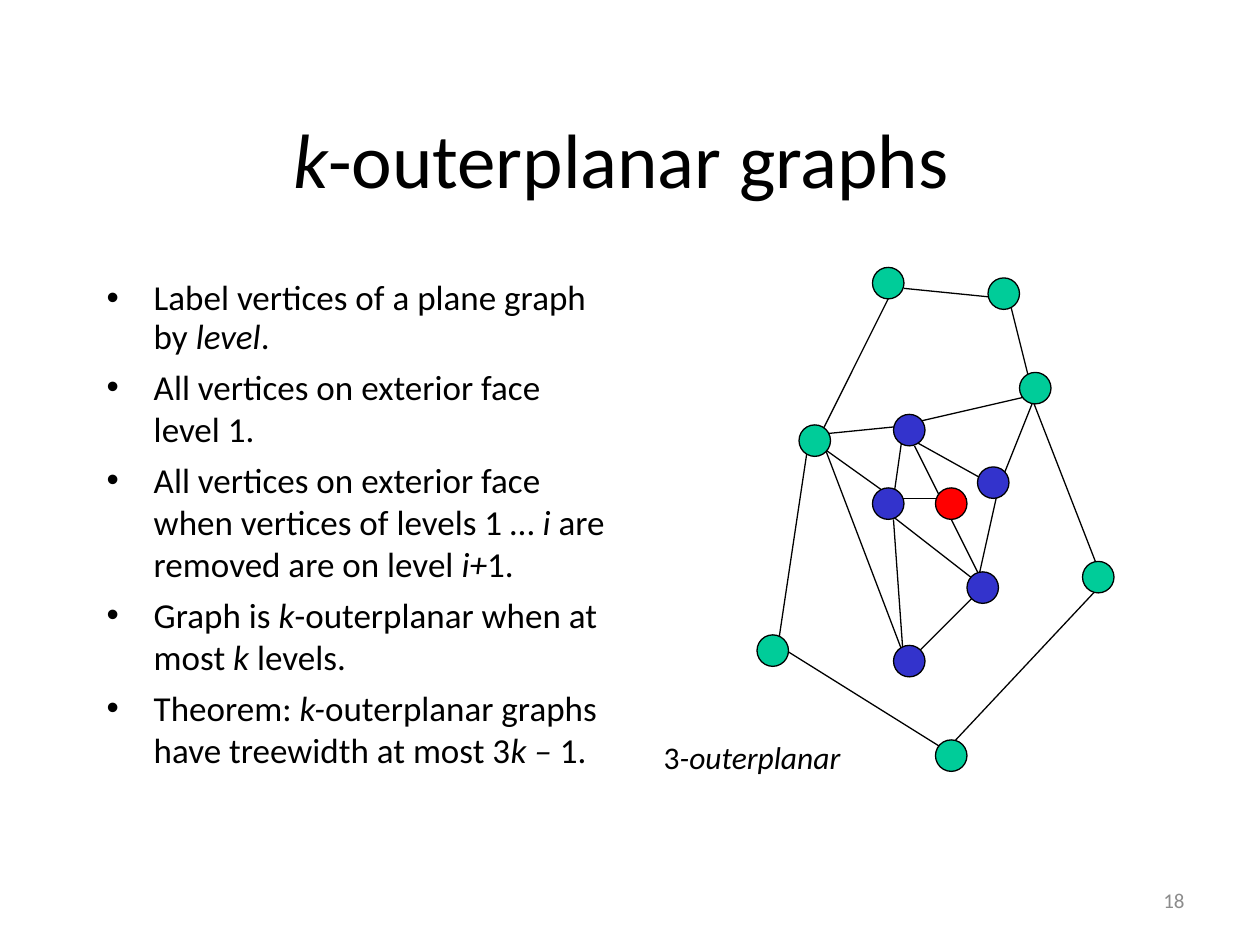
"""Build a slide that explains k-outerplanar graphs beside a drawn example."""
from lxml.etree import SubElement
from pptx import Presentation
from pptx.dml.color import RGBColor
from pptx.enum.shapes import MSO_CONNECTOR, MSO_SHAPE
from pptx.enum.text import MSO_ANCHOR, PP_ALIGN
from pptx.oxml.ns import qn
from pptx.util import Cm, Pt

BLACK = RGBColor(0x00, 0x00, 0x00)
GRAY = RGBColor(0x8C, 0x8C, 0x8C)
GREEN = RGBColor(0x00, 0xCC, 0x99)
BLUE = RGBColor(0x33, 0x33, 0xCC)
RED = RGBColor(0xFF, 0x00, 0x00)

TITLE = ["*k*-outerplanar graphs "]
POINTS = [
    "Label vertices of a plane graph by *level*.",
    "All vertices on exterior face level 1.",
    "All vertices on exterior face when vertices of levels 1 … *i* are removed are on level *i+*1.",
    "Graph is *k*-outerplanar when at most *k* levels.",
    "Theorem: *k-*outerplanar graphs have treewidth at most 3*k – *1.",
]
LABEL = ["3*-outerplanar*"]
PAGE = ["18"]

LEFT, TOP, UNIT, SIZE = 15.26, 5.39, 2.54 / 12, 3
LEVELS = [
    (GREEN, [(11, 0), (22, 1), (25, 10), (31, 28), (4, 15), (0, 35), (17, 45)]),
    (BLUE, [(21, 19), (20, 29), (11, 21), (13, 14), (13, 36)]),
    (RED, [(17, 21)]),
]
EDGES = [
    (18, 23, 22, 31), (13, 24, 14, 38), (20, 22, 13, 22), (13, 22, 6, 17),
    (15, 17, 18, 23), (14, 16, 23, 21), (12, 23, 21, 30), (14, 15, 13, 22),
    (22, 30, 15, 37), (23, 21, 21, 30), (14, 15, 27, 12), (5, 16, 15, 15),
    (13, 2, 6, 16), (5, 16, 2, 36), (18, 46, 2, 36), (18, 46, 33, 30),
    (26, 12, 33, 30), (6, 16, 14, 37), (27, 11, 23, 21), (24, 3, 26, 11),
    (14, 2, 24, 3),
]


def apply(item, **vals):
    for name, val in vals.items():
        setattr(item, name, val)


def spot(x, y):
    return Cm(LEFT + x * UNIT), Cm(TOP + y * UNIT)


def write(slide, box, lines, size, color=BLACK, anchor=MSO_ANCHOR.TOP, **form):
    frame = slide.shapes.add_textbox(*map(Cm, box)).text_frame
    apply(frame, word_wrap=True, vertical_anchor=anchor)
    for num, line in enumerate(lines):
        para = frame.add_paragraph() if num else frame.paragraphs[0]
        apply(para, **form)
        for part, words in enumerate(line.split("*")):
            if words:
                run = para.add_run()
                run.text = words
                apply(run.font, name="Calibri", size=Pt(size), italic=part % 2 == 1)
                run.font.color.rgb = color
    return frame


def bullet(para):
    props = para._p.get_or_add_pPr()
    props.set("marL", str(Cm(0.95)))
    props.set("indent", str(Cm(-0.95)))
    SubElement(props, qn("a:buFont"), typeface="Arial")
    SubElement(props, qn("a:buChar"), char="•")


def draw(slide):
    for edge in EDGES:
        line = slide.shapes.add_connector(
            MSO_CONNECTOR.STRAIGHT, *spot(*edge[:2]), *spot(*edge[2:]))
        line.line.width = Pt(0.75)
        line.line.color.rgb = BLACK
        SubElement(line._element.spPr, qn("a:effectLst"))
    side = Cm(SIZE * UNIT)
    for color, nodes in LEVELS:
        for node in nodes:
            dot = slide.shapes.add_shape(MSO_SHAPE.OVAL, *spot(*node), side, side)
            dot.shadow.inherit = False
            dot.fill.solid()
            dot.fill.fore_color.rgb = color
            dot.line.width = Pt(0.75)
            dot.line.color.rgb = BLACK


def main():
    deck = Presentation()
    apply(deck, slide_width=Cm(25.4), slide_height=Cm(19.05))
    slide = deck.slides.add_slide(deck.slide_layouts[6])
    write(slide, (1.9, 1.7, 21.6, 3.18), TITLE, 44, anchor=MSO_ANCHOR.MIDDLE,
          alignment=PP_ALIGN.CENTER, line_spacing=0.93)
    body = write(slide, (1.9, 5.5, 10.6, 11.43), POINTS, 20, space_before=Pt(5))
    body.paragraphs[0].line_spacing = 0.93
    for para in body.paragraphs:
        bullet(para)
    draw(slide)
    write(slide, (13.13, 14.82, 5.26, 1.22), LABEL, 18, line_spacing=0.93)
    write(slide, (18.2, 17.65, 5.93, 1.01), PAGE, 12, GRAY, MSO_ANCHOR.MIDDLE,
          alignment=PP_ALIGN.RIGHT)
    deck.save("out.pptx")


if __name__ == "__main__":
    main()
